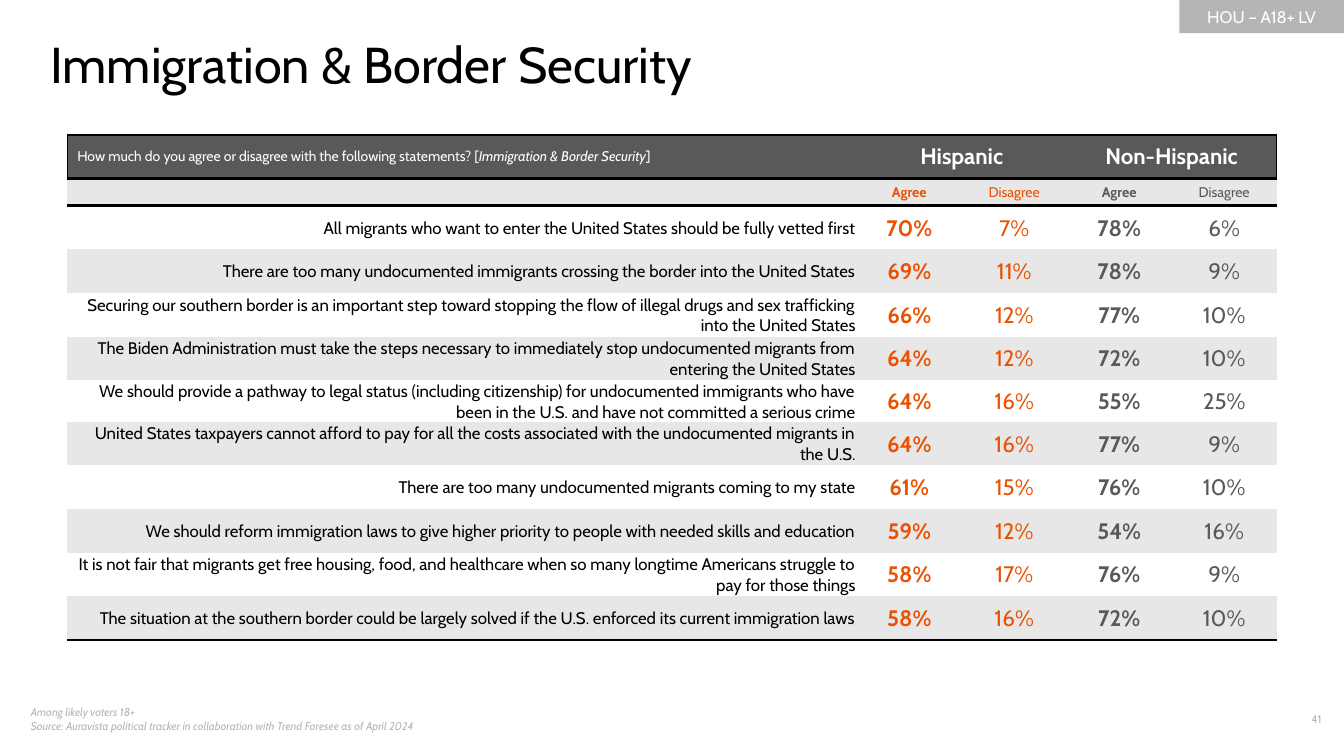
import lxml.etree
import pptx
import pptx.dml.color
import pptx.enum.shapes
import pptx.enum.text
import pptx.oxml.ns
import pptx.util

Pt = pptx.util.Pt
qn = pptx.oxml.ns.qn
ALIGN = pptx.enum.text.PP_ALIGN
MIDDLE = pptx.enum.text.MSO_ANCHOR.MIDDLE

COLORS = {"black": "000000", "white": "FFFFFF", "dark": "595959",
          "band": "E7E7E7", "muted": "B5B5B5", "orange": "EA5101"}
NO_TABLE_STYLE = "{2D5ABB26-0587-4C30-8999-92F81FD0307C}"

QUESTION = ("How much do you agree or disagree with the following statements? [",
            "Immigration & Border Security", "]")
GROUPS = ["Hispanic", "Non-Hispanic"]
ANSWERS = ["Agree", "Disagree"]
ANSWER_COLORS = ["orange", "orange", "dark", "dark"]

# Statement, then agree and disagree percentages for each group
STATEMENTS = [
    ("All migrants who want to enter the United States should be fully vetted first",
     70, 7, 78, 6),
    ("There are too many undocumented immigrants crossing the border into the United States",
     69, 11, 78, 9),
    ("Securing our southern border is an important step toward stopping the flow of "
     "illegal drugs and sex trafficking into the United States", 66, 12, 77, 10),
    ("The Biden Administration must take the steps necessary to immediately stop "
     "undocumented migrants from entering the United States", 64, 12, 72, 10),
    ("We should provide a pathway to legal status (including citizenship) for undocumented "
     "immigrants who have been in the U.S. and have not committed a serious crime",
     64, 16, 55, 25),
    ("United States taxpayers cannot afford to pay for all the costs associated with the "
     "undocumented migrants in the U.S.", 64, 16, 77, 9),
    ("There are too many undocumented migrants coming to my state", 61, 15, 76, 10),
    ("We should reform immigration laws to give higher priority to people with needed "
     "skills and education", 59, 12, 54, 16),
    ("It is not fair that migrants get free housing, food, and healthcare when so many "
     "longtime Americans struggle to pay for those things", 58, 17, 76, 9),
    ("The situation at the southern border could be largely solved if the U.S. enforced "
     "its current immigration laws", 58, 16, 72, 10),
]
COLUMN_WIDTHS = [564, 75, 75, 75, 75]
ROW_HEIGHTS = [31.2, 18.6] + [31.2] * 4 + [28] + [31.2] * 5


class Deck:
    def __init__(self, font):
        self.font = font
        self.prs = pptx.Presentation()
        self.prs.slide_width, self.prs.slide_height = Pt(960), Pt(540)
        self.s = self.prs.slides.add_slide(self.prs.slide_layouts[6])

    def rgb(self, color):
        return pptx.dml.color.RGBColor.from_string(COLORS[color])

    def style(self, tf, size, color, align=ALIGN.LEFT, bold=False, italic=False):
        for p in tf.paragraphs:
            p.alignment = align
            for r in p.runs:
                r.font.name, r.font.size = self.font, Pt(size)
                r.font.bold, r.font.italic = bold, italic
                r.font.color.rgb = self.rgb(color)

    def text(self, box, text, size, color, **look):
        sp = self.s.shapes.add_textbox(*map(Pt, box))
        tf = sp.text_frame
        tf.word_wrap = True
        tf.text = text
        self.style(tf, size, color, **look)
        return tf

    def tag(self, box, text, size, fill, color):
        sp = self.s.shapes.add_shape(
            pptx.enum.shapes.MSO_SHAPE.RECTANGLE, *map(Pt, box))
        sp.shadow.inherit = False
        sp.fill.solid()
        sp.fill.fore_color.rgb = self.rgb(fill)
        sp.line.fill.background()
        tf = sp.text_frame
        tf.vertical_anchor = MIDDLE
        tf.text = text
        self.style(tf, size, color, align=ALIGN.CENTER)

    def table(self, left, top, widths, heights):
        frame = self.s.shapes.add_table(
            len(heights), len(widths), Pt(left), Pt(top), Pt(sum(widths)), Pt(sum(heights)))
        table = frame.table
        table.first_row = table.horz_banding = False
        table._tbl.tblPr.find(qn("a:tableStyleId")).text = NO_TABLE_STYLE
        for column, width in zip(table.columns, widths):
            column.width = Pt(width)
        for row, height in zip(table.rows, heights):
            row.height = Pt(height)
        return table

    def cell(self, cell, text, size, color, fill, borders=None, tight=False, **look):
        tf = cell.text_frame
        tf.text = text
        self.style(tf, size, color, **look)
        if not text:
            lxml.etree.SubElement(tf.paragraphs[0]._p, qn("a:endParaRPr"), sz=str(size * 100))
        cell.vertical_anchor = MIDDLE
        if tight:
            cell.margin_left = cell.margin_right = cell.margin_top = Pt(0.75)
            cell.margin_bottom = 0
        # Borders come before the fill, in the order left, right, top, bottom
        tcPr = cell._tc.get_or_add_tcPr()
        for side in "LRTB":
            if side in (borders or {}):
                ln = lxml.etree.SubElement(tcPr, qn("a:ln" + side), w=str(Pt(borders[side])))
                solid = lxml.etree.SubElement(ln, qn("a:solidFill"))
                lxml.etree.SubElement(solid, qn("a:srgbClr"), val=COLORS["black"])
        cell.fill.solid()
        cell.fill.fore_color.rgb = self.rgb(fill)


def main():
    deck = Deck("Cabin")

    # Tag, title, footnote and page number
    deck.tag((842.4, 0, 117.6, 23.6), "HOU – A18+ LV", 12, "muted", "white")
    tf = deck.text((36, 24, 864, 44), "Immigration & Border Security", 36, "black")
    tf.margin_left = tf.margin_right = tf.margin_top = tf.margin_bottom = 0
    tf.auto_size = pptx.enum.text.MSO_AUTO_SIZE.SHAPE_TO_FIT_TEXT
    deck.text((15, 500.4, 368, 29),
              "Among likely voters 18+\nSource: Auravista political tracker in collaboration "
              "with Trend Foresee as of April 2024", 8, "muted", italic=True)
    deck.text((888, 505.4, 63, 19.5), "41", 8, "muted", align=ALIGN.RIGHT)

    # Table header: question and voter groups
    table = deck.table(48, 96.5, COLUMN_WIDTHS, ROW_HEIGHTS)
    rule = 2.25
    header = {"T": rule, "B": rule}
    question = table.cell(0, 0)
    deck.cell(question, QUESTION[0], 10, "white", "dark", {"L": 1, **header})
    p = question.text_frame.paragraphs[0]
    for piece in QUESTION[1:]:
        p.add_run().text = piece
    deck.style(question.text_frame, 10, "white")
    p.runs[1].font.italic = True
    for i, group in enumerate(GROUPS):
        first = table.cell(0, 1 + 2 * i)
        first.merge(table.cell(0, 2 + 2 * i))
        borders = {"R": 1, **header} if group == GROUPS[-1] else header
        deck.cell(first, group, 16, "white", "dark", borders, align=ALIGN.CENTER, bold=True)

    # Answer labels
    deck.cell(table.cell(1, 0), "", 10, "black", "band", {"T": rule})
    for i, (label, color) in enumerate(zip(ANSWERS * 2, ANSWER_COLORS)):
        deck.cell(table.cell(1, i + 1), label, 10, color, "band", {"T": rule},
                  align=ALIGN.CENTER, bold=label == "Agree")

    # Statements and percentages in alternating bands
    last = len(ROW_HEIGHTS) - 1
    for row, (statement, *values) in enumerate(STATEMENTS, start=2):
        fill = "band" if row % 2 else "white"
        borders = {"B": rule} if row == last else None
        deck.cell(table.cell(row, 0), statement, 12, "black", fill, borders,
                  tight=True, align=ALIGN.RIGHT)
        for i, (value, color) in enumerate(zip(values, ANSWER_COLORS)):
            deck.cell(table.cell(row, i + 1), f"{value}%", 16, color, fill, borders,
                      tight=True, align=ALIGN.CENTER, bold=i % 2 == 0)

    deck.prs.save("out.pptx")


if __name__ == "__main__":
    main()
